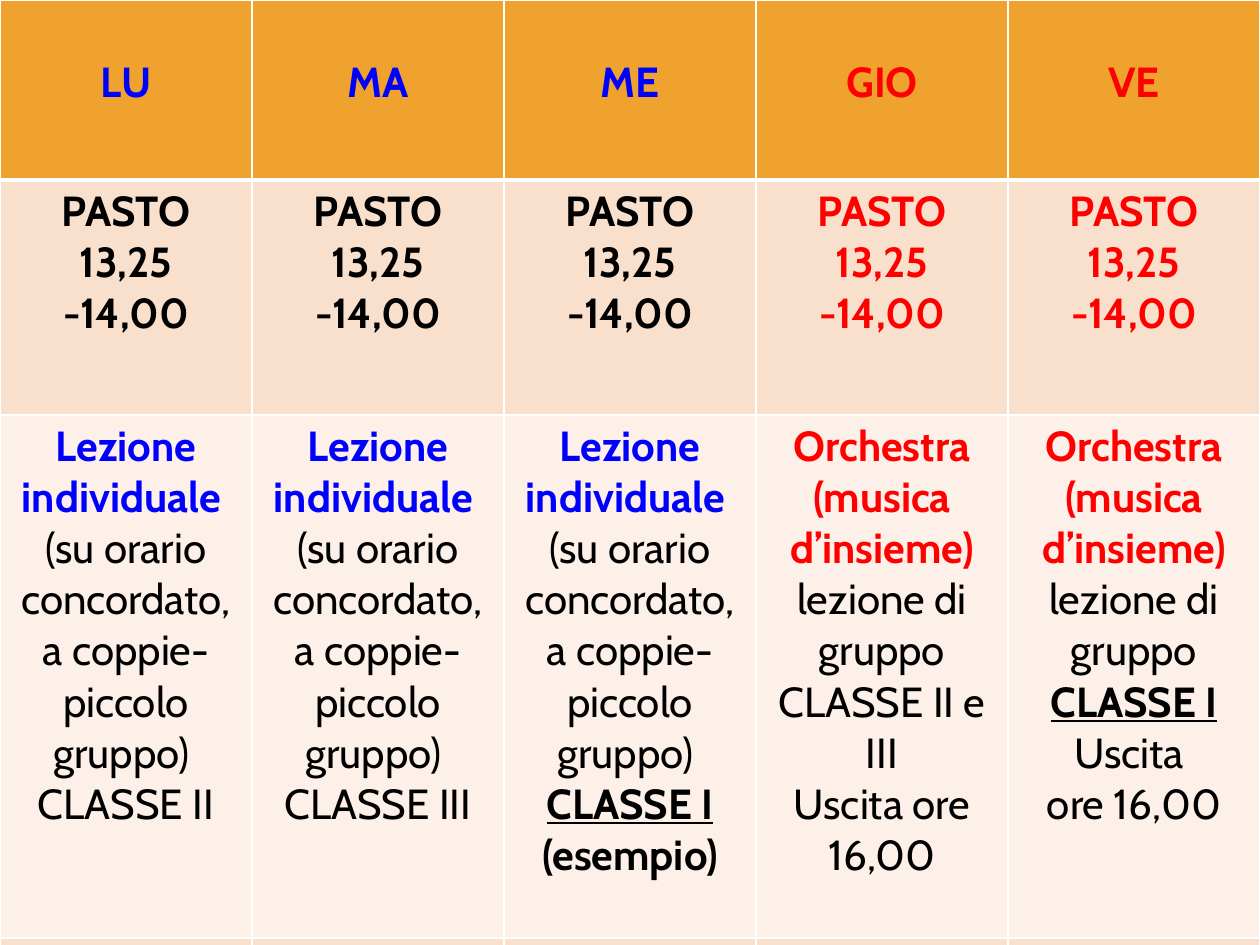
from lxml.etree import SubElement
from pptx import Presentation
from pptx.dml.color import RGBColor
from pptx.enum.text import PP_ALIGN
from pptx.oxml.ns import qn
from pptx.util import Pt

PX = 914400 / 126
COLORS = {
    "blue": "0000FF", "red": "FF0000", "black": "000000", "white": "FFFFFF",
    "header": "F0A22E", "band": "F9E0CD", "light": "FCF0E8",
}
FONT, SIZE = "Cabin", 24
COL_WIDTH = 252
HEADER_TOP = 57

DAYS = [("LU", "blue"), ("MA", "blue"), ("ME", "blue"), ("GIO", "red"), ("VE", "red")]
MEAL_COLORS = ["black"] * 3 + ["red"] * 2
INDIVIDUAL = [
    ("Lezione individuale ", "blue", "b"),
    ("(su orario concordato, a coppie-piccolo gruppo) ", "black", ""),
]
ORCHESTRA = [
    ("Orchestra", "red", "b"),
    ("(musica d’insieme)", "red", "b"),
    ("lezione di gruppo", "black", ""),
]
FIRST_CLASS = ("CLASSE I", "black", "bu")

LESSONS = [
    INDIVIDUAL + [("CLASSE II", "black", "")],
    INDIVIDUAL + [("CLASSE III", "black", "")],
    INDIVIDUAL + [FIRST_CLASS, ("(esempio)", "black", "b")],
    ORCHESTRA + [("CLASSE II e III", "black", ""), ("Uscita ore 16,00", "black", "")],
    ORCHESTRA + [FIRST_CLASS, ("Uscita ", "black", ""), ("ore 16,00", "black", "")],
]
ROWS = [
    (180, "header", [[(day, color, "b")] for day, color in DAYS]),
    (235, "band", [[("PASTO", c, "b"), ("13,25 -14,00", c, "b")] for c in MEAL_COLORS]),
    (523, "light", LESSONS),
    (54, "band", [[] for _ in DAYS]),
]


def px(n):
    return round(n * PX)


def rgb(name):
    return RGBColor.from_string(COLORS[name])


def add_borders(cell, top, bottom):
    tc_pr = cell._tc.get_or_add_tcPr()
    for side, width in (("L", 1), ("R", 1), ("T", top), ("B", bottom)):
        line = SubElement(tc_pr, qn("a:ln" + side), w=str(Pt(width)))
        fill = SubElement(line, qn("a:solidFill"))
        SubElement(fill, qn("a:srgbClr"), val=COLORS["white"])


def write_lines(tf, lines):
    for i, (text, color, style) in enumerate(lines):
        p = tf.paragraphs[0] if i == 0 else tf.add_paragraph()
        p.text = text
        p.alignment = PP_ALIGN.CENTER
        font = p.runs[0].font
        font.name, font.size = FONT, Pt(SIZE)
        font.bold, font.underline = "b" in style, "u" in style
        font.color.rgb = rgb(color)


prs = Presentation()
prs.slide_width, prs.slide_height = px(1260), px(945)
s = prs.slides.add_slide(prs.slide_layouts[6])

table_height = sum(height for height, _, _ in ROWS)
table = s.shapes.add_table(
    len(ROWS), len(DAYS), 0, 0, px(COL_WIDTH * len(DAYS)), px(table_height)
).table
table.horz_banding = False
for column in table.columns:
    column.width = px(COL_WIDTH)

for r, (height, fill, cells) in enumerate(ROWS):
    table.rows[r].height = px(height)
    for c, lines in enumerate(cells):
        cell = table.cell(r, c)
        add_borders(cell, 3 if r == 1 else 1, 3 if r == 0 else 1)
        cell.fill.solid()
        cell.fill.fore_color.rgb = rgb(fill)
        if r == 0:
            cell.margin_top = px(HEADER_TOP)
        write_lines(cell.text_frame, lines)

prs.save("out.pptx")
